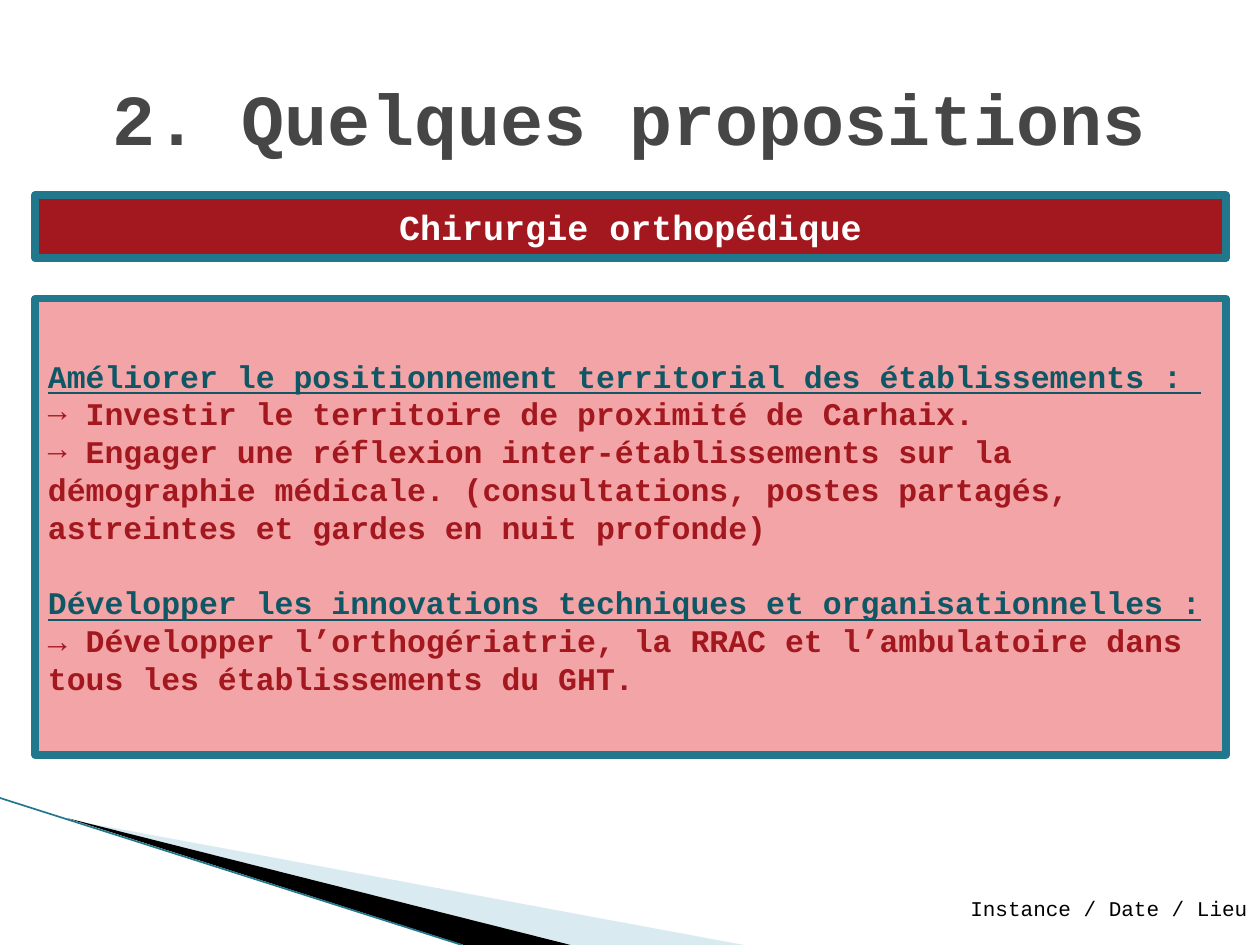
from lxml import etree
from pptx import Presentation
from pptx import util as u
from pptx.dml import color
from pptx.enum import shapes, text
from pptx.oxml import ns

Pt = u.Pt
TEAL, DARK_TEAL, RED, PINK = "21788D", "105766", "A3171E", "F2A4A7"
LEFT, WIDTH = 20.16, 680.4


def rgb(value):
    """Turn a hex string into a colour."""
    return color.RGBColor.from_string(value)


def set_values(target, values):
    """Set each attribute named in the dict."""
    for name, value in values.items():
        setattr(target, name, value)


class SlideBuilder:
    """Hold the style and the current slide."""

    font_name = "Courier New"
    border = 4.33

    def __init__(self, presentation):
        """Add a slide with a title and a body."""
        self.slide = presentation.slides.add_slide(presentation.slide_layouts[1])

    def place(self, shape, left, top, width, height):
        """Move and size a shape in points."""
        box = dict(left=Pt(left), top=Pt(top), width=Pt(width), height=Pt(height))
        set_values(shape, box)

    def paint(self, shape, fill, line=None):
        """Fill a shape and draw its border."""
        shape.fill.solid()
        shape.fill.fore_color.rgb = rgb(fill)
        if line:
            shape.line.color.rgb = rgb(line)
            shape.line.width = Pt(self.border)
        else:
            shape.line.fill.background()

    def frame(self, shape, anchor):
        """Set wrapping and anchoring of a shape's text."""
        set_values(shape.text_frame, dict(
            word_wrap=True, auto_size=text.MSO_AUTO_SIZE.NONE, vertical_anchor=anchor))
        return shape.text_frame

    def add_words(self, paragraph, words, size, hue, align, bold=True, underline=False):
        """Put one formatted run into a paragraph."""
        paragraph.alignment = align
        run = paragraph.add_run()
        run.text = words
        set_values(run.font, dict(
            name=self.font_name, size=Pt(size), bold=bold, underline=underline))
        run.font.color.rgb = rgb(hue)

    def title(self, words):
        """Fill the title placeholder."""
        shape = self.slide.shapes.title
        self.place(shape, 36, 21.6, 648, 90)
        frame = self.frame(shape, text.MSO_ANCHOR.MIDDLE)
        self.add_words(frame.paragraphs[0], words, 41, "464646", text.PP_ALIGN.CENTER)

    def banner(self, words):
        """Add the coloured heading bar."""
        shape = self.slide.shapes.add_shape(
            shapes.MSO_SHAPE.RECTANGLE, Pt(LEFT), Pt(111.6), Pt(WIDTH), Pt(36))
        shape.shadow.inherit = False
        self.paint(shape, RED, TEAL)
        frame = self.frame(shape, text.MSO_ANCHOR.MIDDLE)
        self.add_words(frame.paragraphs[0], words, 20, "FFFFFF", text.PP_ALIGN.CENTER)

    def body(self, items):
        """Fill the body placeholder with headings and points."""
        shape = self.slide.placeholders[1]
        self.place(shape, LEFT, 170.64, WIDTH, 260.64)
        self.paint(shape, PINK, TEAL)
        frame = self.frame(shape, text.MSO_ANCHOR.MIDDLE)
        for index, (kind, words) in enumerate(items):
            paragraph = frame.add_paragraph() if index else frame.paragraphs[0]
            heading = kind == "heading"
            self.bullet(paragraph, "→" if kind == "bullet" else None)
            set_values(paragraph, dict(
                line_spacing=Pt(21.6), space_after=Pt(0),
                space_before=Pt(21.6 if heading and index else 0)))
            self.add_words(paragraph, words, 18, DARK_TEAL if heading else RED,
                           text.PP_ALIGN.LEFT, underline=heading)

    def bullet(self, paragraph, mark):
        """Give a paragraph a bullet mark or none."""
        properties = paragraph._p.get_or_add_pPr()
        properties.set("marL", "0")
        properties.set("indent", "0")
        if mark:
            etree.SubElement(properties, ns.qn("a:buFont"), typeface=self.font_name)
            etree.SubElement(properties, ns.qn("a:buChar"), char=mark)
        else:
            etree.SubElement(properties, ns.qn("a:buNone"))

    def footer(self, words):
        """Add the right-aligned note at the bottom."""
        shape = self.slide.shapes.add_textbox(Pt(362.88), Pt(508.32), Pt(357.12), Pt(21.6))
        frame = self.frame(shape, text.MSO_ANCHOR.TOP)
        self.add_words(frame.paragraphs[0], words, 12, "000000", text.PP_ALIGN.RIGHT, bold=False)

    def wedge(self, points, fill, opacity=100):
        """Add a filled triangle."""
        start, *others = [(Pt(x), Pt(y)) for x, y in points]
        builder = self.slide.shapes.build_freeform(*start)
        builder.add_line_segments(others, close=True)
        shape = builder.convert_to_shape()
        shape.shadow.inherit = False
        self.paint(shape, fill)
        hue = shape._element.spPr.find(".//" + ns.qn("a:srgbClr"))
        etree.SubElement(hue, ns.qn("a:alpha"), val=str(opacity * 1000))

    def edge(self, start, end):
        """Add a thin straight line."""
        line = self.slide.shapes.add_connector(
            shapes.MSO_CONNECTOR.STRAIGHT, *map(Pt, start + end))
        line.line.color.rgb = rgb(TEAL)
        line.line.width = Pt(0.95)
        etree.SubElement(line._element.spPr, ns.qn("a:effectLst"))


def main():
    """Build and save the slide."""
    presentation = Presentation()
    set_values(presentation, dict(slide_width=Pt(720), slide_height=Pt(540)))
    builder = SlideBuilder(presentation)
    builder.wedge([(39.6, 468.4), (425, 540), (326, 540)], "A0CBDC", 40)
    builder.wedge([(38.2, 467.5), (326, 540), (265, 540)], "000000")
    builder.edge((0, 456), (264, 540))
    builder.title("2. Quelques propositions")
    builder.footer("Instance / Date / Lieu")
    builder.banner("Chirurgie orthopédique")
    builder.body([
        ("heading", "Améliorer le positionnement territorial des établissements : "),
        ("bullet", " Investir le territoire de proximité de Carhaix."),
        ("bullet", " Engager une réflexion inter-établissements sur la démographie médicale. "
                   "(consultations, postes partagés, astreintes et gardes en nuit profonde)"),
        ("heading", "Développer les innovations techniques et organisationnelles :"),
        ("plain", "→ Développer l’orthogériatrie, la RRAC et l’ambulatoire dans "
                  "tous les établissements du GHT."),
    ])
    presentation.save("out.pptx")


if __name__ == "__main__":
    main()
